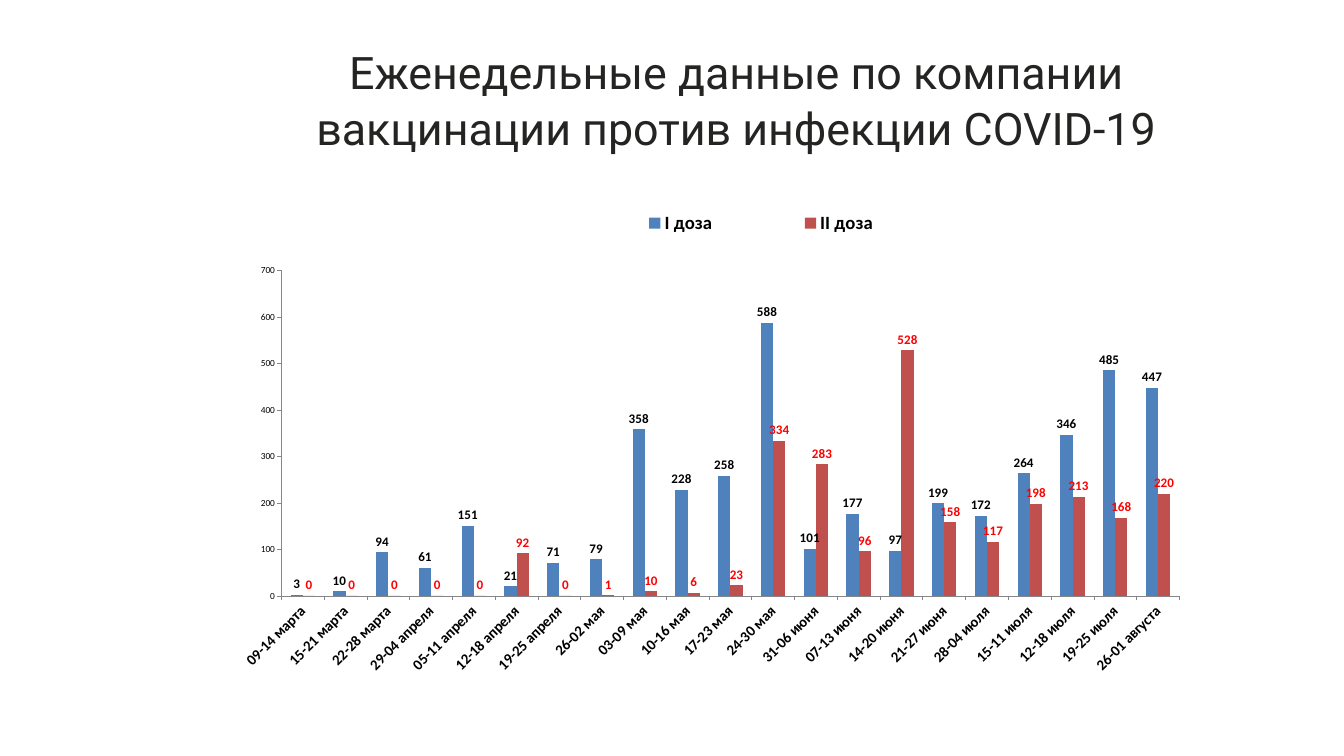
from lxml import etree
from pptx import Presentation
from pptx.chart.data import CategoryChartData
from pptx.dml.color import RGBColor
from pptx.enum.chart import XL_CHART_TYPE as ChartType
from pptx.enum.chart import XL_LABEL_POSITION as LabelPosition
from pptx.enum.chart import XL_LEGEND_POSITION as LegendPosition
from pptx.enum.chart import XL_TICK_MARK as TickMark
from pptx.enum.text import MSO_ANCHOR, MSO_AUTO_SIZE, PP_ALIGN
from pptx.oxml.ns import qn
from pptx.util import Inches, Pt

INK = RGBColor(0x24, 0x24, 0x23)
BLACK = RGBColor(0, 0, 0)
RED = RGBColor(0xFF, 0, 0)
FIRST_BLUE = RGBColor(0x4F, 0x81, 0xBD)
SECOND_RED = RGBColor(0xC0, 0x50, 0x4D)
AXIS_GRAY = RGBColor(0x86, 0x86, 0x86)

WEEKS = [
    "09-14 марта", "15-21 марта", "22-28 марта", "29-04 апреля", "05-11 апреля",
    "12-18 апреля", "19-25 апреля", "26-02 мая", "03-09 мая", "10-16 мая",
    "17-23 мая", "24-30 мая", "31-06 июня", "07-13 июня", "14-20 июня",
    "21-27 июня", "28-04 июля", "15-11 июля", "12-18 июля", "19-25 июля",
    "26-01 августа",
]
FIRST_DOSE = [3, 10, 94, 61, 151, 21, 71, 79, 358, 228, 258, 588, 101, 177, 97,
              199, 172, 264, 346, 485, 447]
SECOND_DOSE = [0, 0, 0, 0, 0, 92, 0, 1, 10, 6, 23, 334, 283, 96, 528,
               158, 117, 198, 213, 168, 220]


def format_font(font, size, color=BLACK, bold=False, name="Calibri"):
    font.name = name
    font.size = Pt(size)
    font.bold = bold
    font.color.rgb = color


def place(element, x, y, w, h, inner=False):
    """Lay out a chart part by hand, in fractions of the chart's size."""
    layout = element.find(qn("c:layout"))
    if layout is None:
        layout = etree.Element(qn("c:layout"))
        if inner:
            element.insert(0, layout)
        else:
            element.find(qn("c:legendPos")).addnext(layout)
    manual = etree.SubElement(layout, qn("c:manualLayout"))
    settings = [("layoutTarget", "inner")] if inner else []
    settings += [("xMode", "edge"), ("yMode", "edge"),
                 ("x", x), ("y", y), ("w", w), ("h", h)]
    for tag, value in settings:
        etree.SubElement(manual, qn(f"c:{tag}")).set("val", str(value))


deck = Presentation()
deck.slide_width, deck.slide_height = Inches(20), Inches(11.25)
page = deck.slides.add_slide(deck.slide_layouts[5])

# Title
title = page.shapes.title
title.left, title.top = Inches(3.92), Inches(0.63)
title.width, title.height = Inches(14.08), Inches(2.52)
frame = title.text_frame
frame.margin_left = frame.margin_right = frame.margin_top = frame.margin_bottom = 0
frame.word_wrap = True
frame.auto_size = MSO_AUTO_SIZE.NONE
frame.vertical_anchor = MSO_ANCHOR.TOP
para = frame.paragraphs[0]
para.alignment = PP_ALIGN.CENTER
para.line_spacing = Pt(60)
span = para.add_run()
span.text = "Еженедельные данные по компании вакцинации против инфекции COVID-19"
format_font(span.font, 48, INK, name="Roboto")

# Weekly doses
data = CategoryChartData()
data.categories = WEEKS
data.add_series("I доза", FIRST_DOSE)
data.add_series("II доза", SECOND_DOSE)
chart = page.shapes.add_chart(
    ChartType.COLUMN_CLUSTERED, Inches(2.92), Inches(2.79),
    Inches(14.75), Inches(7.58), data).chart
format_font(chart.font, 10)
chart.has_title = False

chart.has_legend = True
chart.legend.position = LegendPosition.TOP
chart.legend.include_in_layout = False
format_font(chart.legend.font, 20, bold=True)
place(chart.legend._element, 0.37, 0.04, 0.4, 0.06)

plot = chart.plots[0]
plot.vary_by_categories = False
plot.gap_width = 150
plot.overlap = 0
place(plot._element.getparent(), 0.086, 0.163, 0.906, 0.639, inner=True)

for series, fill, label_color in zip(
        plot.series, (FIRST_BLUE, SECOND_RED), (BLACK, RED)):
    series.format.fill.solid()
    series.format.fill.fore_color.rgb = fill
    series.invert_if_negative = False
    labels = series.data_labels
    labels.show_value = True
    labels.position = LabelPosition.OUTSIDE_END
    format_font(labels.font, 14, label_color, bold=True)

weeks, doses = chart.category_axis, chart.value_axis
for axis in (weeks, doses):
    axis.has_major_gridlines = False
    axis.major_tick_mark = TickMark.OUTSIDE
    axis.minor_tick_mark = TickMark.NONE
    axis.format.line.color.rgb = AXIS_GRAY
    axis.format.line.width = Pt(0.75)
format_font(weeks.tick_labels.font, 16, bold=True)
weeks._element.find(qn("c:txPr")).find(qn("a:bodyPr")).set("rot", "-2700000")
format_font(doses.tick_labels.font, 10)
doses.minimum_scale, doses.maximum_scale, doses.major_unit = 0, 700, 100

deck.save("out.pptx")
